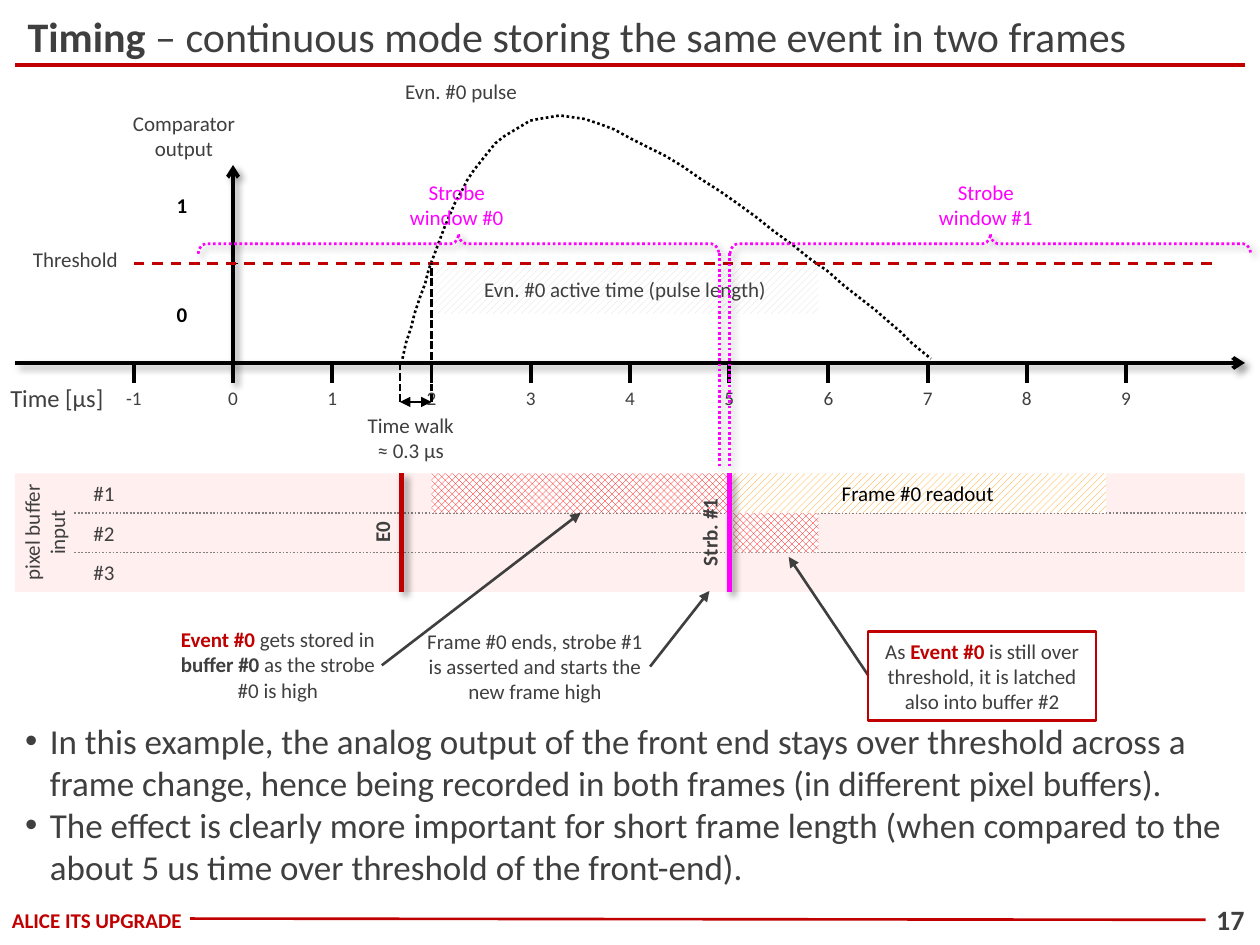
from lxml.etree import SubElement
from pptx import Presentation
from pptx.dml.color import RGBColor
from pptx.enum.dml import MSO_LINE, MSO_PATTERN
from pptx.enum.shapes import MSO_CONNECTOR, MSO_SHAPE
from pptx.enum.text import MSO_ANCHOR, MSO_AUTO_SIZE, PP_ALIGN
from pptx.oxml.ns import qn
from pptx.util import Pt

DARK, RED, BLACK, MAGENTA, GRAY = "3F3F3F", "C00000", "000000", "FF00FF", "808080"
DOT, SHORT_DASH, DASH = MSO_LINE.ROUND_DOT, MSO_LINE.SQUARE_DOT, MSO_LINE.DASH
STRIPES, CHECKS = MSO_PATTERN.WIDE_UPWARD_DIAGONAL, MSO_PATTERN.LARGE_CHECKER_BOARD
LEFT, CENTER = PP_ALIGN.LEFT, PP_ALIGN.CENTER

AXIS_Y, TICK_Y, THRESHOLD_Y = 207.4, 218.9, 150.5
BAND_TOP, ROW_HEIGHT = 270.5, 22.6
BAND_BOTTOM = BAND_TOP + 3 * ROW_HEIGHT
EDGE_LEFT, EDGE_RIGHT = 8.6, 711.4


def color(value):
    return RGBColor.from_string(value)


def time_x(time):
    return 133.2 + 56.7 * time


def cubic(start, first, second, end, steps=24):
    for step in range(1, steps + 1):
        t = step / steps
        weights = ((1 - t) ** 3, 3 * t * (1 - t) ** 2, 3 * t * t * (1 - t), t ** 3)
        yield tuple(
            sum(weight * point[axis] for weight, point in zip(weights, (start, first, second, end)))
            for axis in (0, 1)
        )


class Painter:
    font_name = "Calibri"

    def __init__(self, slide):
        self.slide = slide
        self.shapes = slide.shapes

    def set_text(self, frame, paragraphs, size=12, ink=DARK, bold=False, align=CENTER,
                 anchor=MSO_ANCHOR.MIDDLE, wrap=True, margin=3, bullet=False):
        frame.auto_size = MSO_AUTO_SIZE.NONE
        frame.word_wrap = wrap
        frame.vertical_anchor = anchor
        frame.margin_left = frame.margin_right = Pt(margin)
        frame.margin_top = frame.margin_bottom = Pt(3)
        for index, runs in enumerate(paragraphs):
            para = frame.add_paragraph() if index else frame.paragraphs[0]
            para.alignment = align
            para.space_before = Pt(0)
            if bullet:
                properties = para._p.get_or_add_pPr()
                properties.set("marL", str(Pt(14.2)))
                properties.set("indent", str(-Pt(14.2)))
                SubElement(properties, qn("a:buChar"), char="•")
            para.font.name = self.font_name
            para.font.size = Pt(size)
            para.font.bold = bold
            para.font.color.rgb = color(ink)
            for run in [runs] if isinstance(runs, str) else runs:
                words, run_ink = (run, None) if isinstance(run, str) else run
                span = para.add_run()
                span.text = words
                if run_ink:
                    span.font.bold = True
                    span.font.color.rgb = color(run_ink)

    def placeholder(self, shape, area, paragraphs, **style):
        shape.left, shape.top, shape.width, shape.height = map(Pt, area)
        self.set_text(shape.text_frame, paragraphs, **style)

    def label(self, area, *paragraphs, rotation=0, **style):
        box = self.shapes.add_textbox(*map(Pt, area))
        box.rotation = rotation
        self.set_text(box.text_frame, paragraphs, **style)

    def stroke(self, line, ink, width, dash=None):
        line.color.rgb = color(ink)
        line.width = Pt(width)
        if dash:
            line.dash_style = dash

    def effects(self, shape, shadow):
        properties = shape._element.spPr
        effects = properties.find(qn("a:effectLst"))
        if effects is None:
            effects = SubElement(properties, qn("a:effectLst"))
        if shadow:
            outer = SubElement(effects, qn("a:outerShdw"), blurRad=str(Pt(4)),
                               dist=str(Pt(3)), dir="2700000", algn="tl", rotWithShape="0")
            ink = SubElement(outer, qn("a:srgbClr"), val=BLACK)
            SubElement(ink, qn("a:alpha"), val="40000")

    def line(self, start, end, ink=BLACK, width=2.25, dash=None, head=None, tail=None, shadow=False):
        connector = self.shapes.add_connector(MSO_CONNECTOR.STRAIGHT, *map(Pt, start + end))
        self.stroke(connector.line, ink, width, dash)
        outline = connector._element.spPr.find(qn("a:ln"))
        for tag, kind in (("a:headEnd", head), ("a:tailEnd", tail)):
            if kind:
                SubElement(outline, qn(tag), type=kind)
        self.effects(connector, shadow)

    def box(self, area, *paragraphs, fill=None, alpha=None, pattern=None, outline=None, ink=DARK):
        box = self.shapes.add_shape(MSO_SHAPE.RECTANGLE, *map(Pt, area))
        box.shadow.inherit = False
        if pattern:
            box.fill.patterned()
            box.fill.pattern = pattern
            box.fill.fore_color.rgb = color(fill)
            box.fill.back_color.rgb = color("FFFFFF")
        elif fill:
            box.fill.solid()
            box.fill.fore_color.rgb = color(fill)
        else:
            box.fill.background()
        if alpha:
            swatch = box._element.spPr.find(".//" + qn("a:srgbClr"))
            SubElement(swatch, qn("a:alpha"), val=str(alpha * 1000))
        if outline:
            self.stroke(box.line, outline, 1.5)
        else:
            box.line.fill.background()
        if paragraphs:
            self.set_text(box.text_frame, paragraphs, ink=ink)

    def brace(self, area):
        brace = self.shapes.add_shape(MSO_SHAPE.LEFT_BRACE, *map(Pt, area))
        brace.rotation = 90
        brace.adjustments[0] = 0.37
        brace.shadow.inherit = False
        brace.fill.background()
        self.stroke(brace.line, MAGENTA, 1.5, DOT)
        self.effects(brace, True)

    def curve(self, points):
        builder = self.shapes.build_freeform(*points[0], scale=Pt(1))
        builder.add_line_segments(points[1:], close=False)
        curve = builder.convert_to_shape()
        curve.shadow.inherit = False
        curve.fill.background()
        self.stroke(curve.line, BLACK, 1.5, DOT)


def draw_frame(painter):
    title, body = painter.slide.placeholders
    painter.placeholder(title, (8.6, 3.6, 702.7, 33.8), [
        [("Timing ", DARK), "– continuous mode storing the same event in two frames"],
    ], size=24, align=LEFT, margin=7.2)
    painter.placeholder(body, (8.6, 408.2, 702.7, 105.1), [
        "In this example, the analog output of the front end stays over threshold across a "
        "frame change, hence being recorded in both frames (in different pixel buffers).",
        "The effect is clearly more important for short frame length (when compared to the "
        "about 5 us time over threshold of the front-end).",
    ], size=20, align=LEFT, anchor=MSO_ANCHOR.TOP, margin=5.7, bullet=True)
    painter.line((EDGE_LEFT, 37.4), (EDGE_RIGHT, 37.4), RED)
    painter.label((1.4, 519.8, 108, 11.5), "ALICE ITS UPGRADE", ink=RED, bold=True, wrap=False)
    painter.line((689, 525.6), (108.7, 524.9), RED, 1.5)
    painter.label((689, 514.1, 28.1, 22.3), "17", size=16, bold=True, wrap=False)


def draw_buffers(painter):
    painter.box((EDGE_LEFT, BAND_TOP, 702.7, 3 * ROW_HEIGHT), fill="FFCCCC", alpha=30)
    painter.label((-8.6, 287.3, 67.7, 33.8), "pixel buffer input", rotation=270)
    for row in range(3):
        top = BAND_TOP + row * ROW_HEIGHT
        painter.label((42.5, top, 33.8, ROW_HEIGHT), f"#{row + 1}")
        if row:
            painter.line((42.5, top), (EDGE_RIGHT, top), GRAY, 1, DOT)
    for start, end, row, ink, pattern, words in (
        (5, 8.8, 0, "FF9900", STRIPES, ["Frame #0 readout"]),
        (2, 5, 0, "FF0000", CHECKS, []),
        (5.04, 5.9, 1, "FF0000", CHECKS, []),
    ):
        area = (time_x(start), BAND_TOP + row * ROW_HEIGHT, time_x(end) - time_x(start), ROW_HEIGHT)
        painter.box(area, *words, fill=ink, pattern=pattern, ink=BLACK)
    for time, ink, name in ((1.7, RED, "E0"), (5, MAGENTA, "Strb. #1")):
        x = time_x(time)
        painter.line((x, BAND_TOP), (x, BAND_BOTTOM), ink, 3, shadow=True)
        painter.label((x - 45.3, 293, 67.7, 22.3), name, rotation=270, bold=True, wrap=False)


def draw_timeline(painter):
    painter.line((EDGE_LEFT, AXIS_Y), (EDGE_RIGHT, AXIS_Y), tail="arrow", shadow=True)
    painter.label((2.9, TICK_Y, 62.6, 17.3), "Time [µs]", size=14, align=LEFT)
    for time in range(-1, 10):
        x = time_x(time)
        if time:
            painter.line((x, TICK_Y), (x, AXIS_Y))
        painter.label((x - 11.2, TICK_Y, 22.4, 17.3), str(time), size=11)
    painter.box((time_x(2), 151.2, time_x(5.9) - time_x(2), 28.1),
                "Evn. #0 active time (pulse length)", fill="DDDDDD", pattern=STRIPES)
    painter.line((time_x(0), TICK_Y), (time_x(0), 94.3), tail="arrow", shadow=True)
    painter.label((71.3, 60.5, 67.7, 33.8), "Comparator", "output")
    for level, top in (("1", 106.6), ("0", 168.5)):
        painter.label((93.6, top, 20.9, 21.6), level, ink=BLACK, bold=True, wrap=False)
    start, peak, end = (229.7, 204.8), (320.4, 66.2), (532.1, 205.2)
    painter.curve([start, *cubic(start, (249.8, 135.4), (270, 66.2), peak),
                   *cubic(peak, (370.8, 66.2), (496.8, 174.2), end)])
    painter.label((223.9, 43.2, 79.2, 17.3), "Evn. #0 pulse")
    painter.line((130.3, THRESHOLD_Y), (136.1, THRESHOLD_Y), width=0.75)
    painter.line((time_x(-1), THRESHOLD_Y), (694.8, THRESHOLD_Y), RED, 1.5, DASH)
    painter.label((15.8, 139.7, 54.7, 17.3), "Threshold", align=LEFT)
    for x, top in ((228.6, AXIS_Y), (time_x(2), THRESHOLD_Y)):
        painter.line((x, 229.7), (x, top), width=1.5, dash=SHORT_DASH)
    painter.line((228.6, 229.7), (time_x(2), 229.7), width=1.5, head="triangle", tail="triangle")
    painter.label((200.9, 233.3, 67.7, 33.8), "Time walk", "≈ 0.3 µs")


def draw_strobes(painter):
    for number, edge, brace_x, label_x in ((0, 4.9, 256.3, 229.7), (1, 5, 560.2, 532.1)):
        x = time_x(edge)
        painter.line((x, 144.7), (x, 267.1), MAGENTA, 1.5, DOT, shadow=True)
        painter.brace((brace_x, -9.4, 11.5, 297.4))
        painter.label((label_x, 100.1, 62.6, 33.8), f"Strobe window #{number}", ink=MAGENTA)


def draw_notes(painter):
    for start, end in (
        ((218.2, 380.2), (331.9, 293)),
        ((496.1, 385.9), (450.7, 318.2)),
        ((371.5, 380.9), (405.4, 337.7)),
    ):
        painter.line(start, end, DARK, 1.5, tail="triangle")
    painter.label((99.4, 354.2, 118.8, 51.1), [
        ("Event #0 ", RED), "gets stored in ", ("buffer #0", DARK), " as the strobe #0 is high"])
    painter.label((239.8, 355, 131.8, 51.1),
                  "Frame #0 ends, strobe #1 is asserted and starts the new frame high")
    painter.box((496.1, 360.7, 130.3, 51.1), [
        "As ", ("Event #0", RED), " is still over threshold, it is latched also into buffer #2",
    ], outline=RED)


def main():
    deck = Presentation()
    deck.slide_width, deck.slide_height = Pt(720), Pt(540)
    painter = Painter(deck.slides.add_slide(deck.slide_layouts[1]))
    for draw in (draw_frame, draw_buffers, draw_timeline, draw_strobes, draw_notes):
        draw(painter)
    deck.save("out.pptx")


if __name__ == "__main__":
    main()
